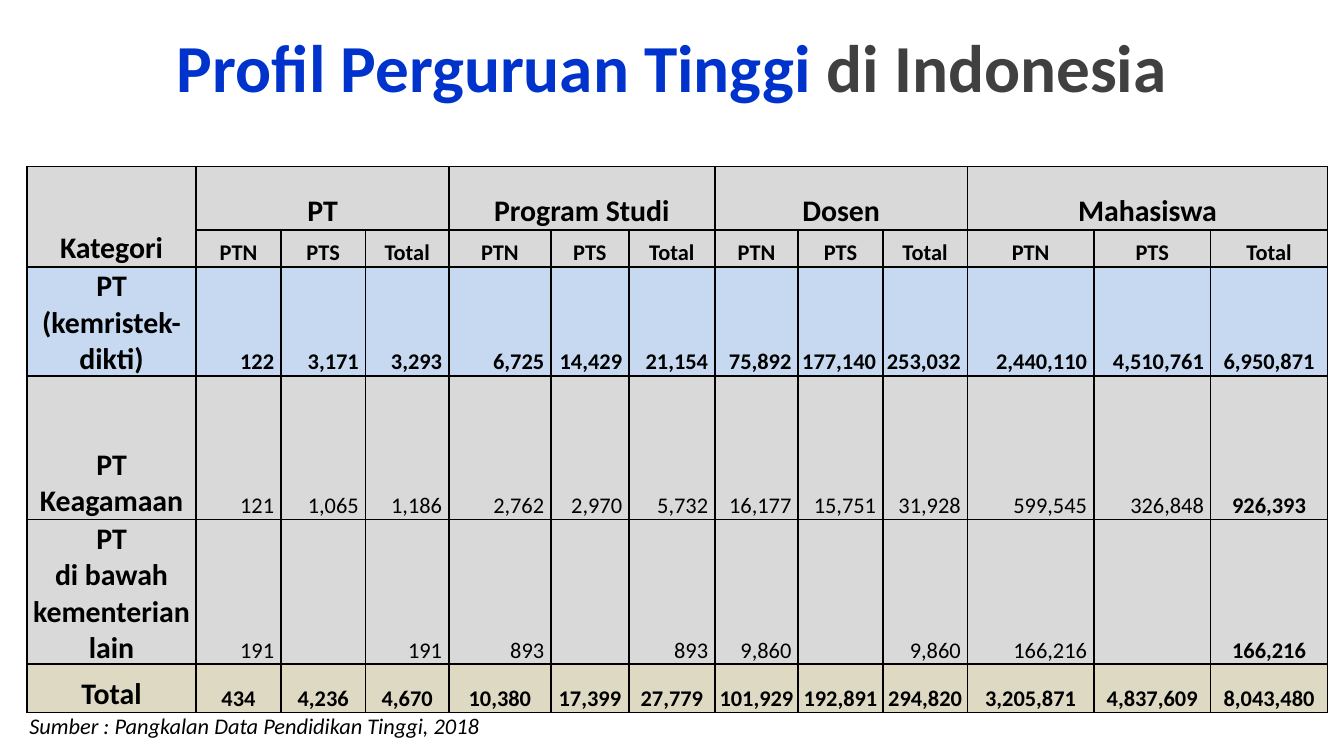
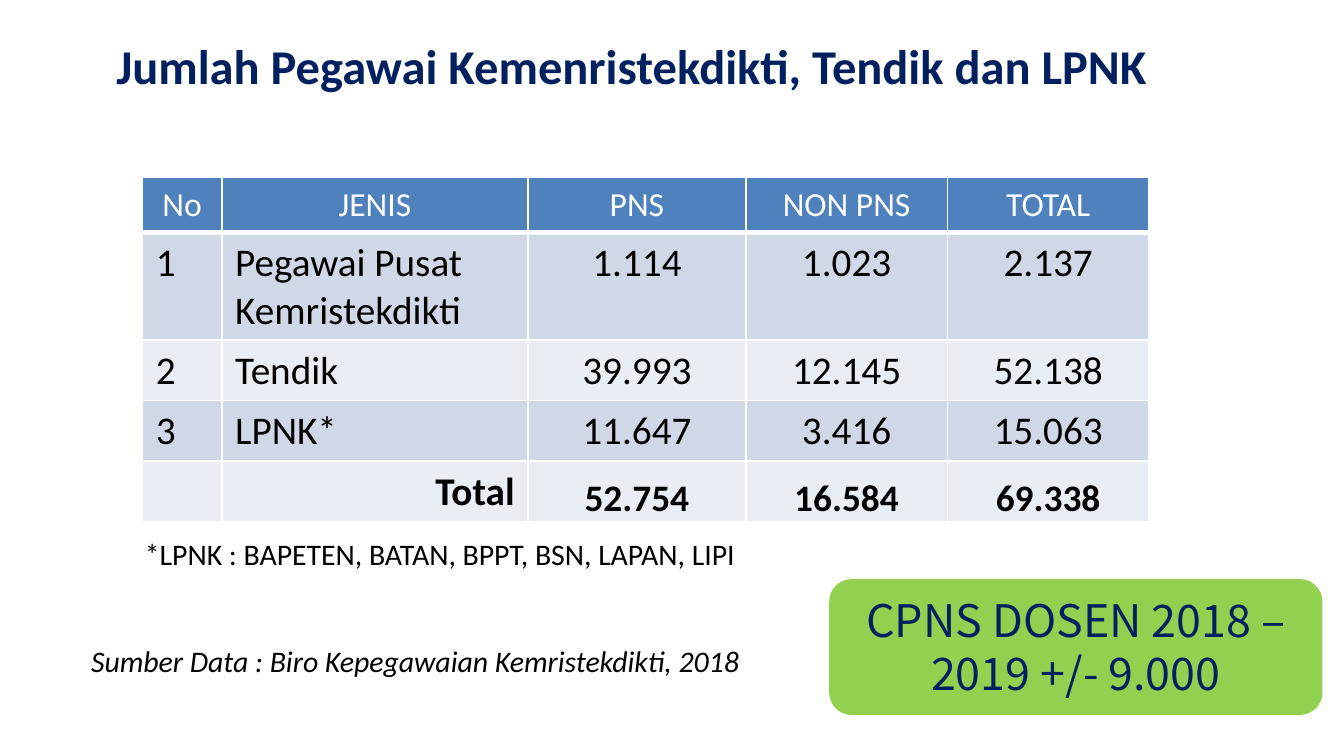
import lxml.etree
import pptx
import pptx.dml.color
import pptx.enum.shapes
import pptx.enum.text
import pptx.oxml.ns
import pptx.util

RGBColor = pptx.dml.color.RGBColor
ALIGN = pptx.enum.text.PP_ALIGN
ANCHOR = pptx.enum.text.MSO_ANCHOR
Inches = pptx.util.Inches

BLACK = RGBColor(0x00, 0x00, 0x00)
WHITE = RGBColor(0xFF, 0xFF, 0xFF)
BLUE = RGBColor(0x00, 0x33, 0xCC)
NAVY = RGBColor(0x00, 0x20, 0x60)
CHARCOAL = RGBColor(0x40, 0x40, 0x40)
GREY = RGBColor(0xD9, 0xD9, 0xD9)
LIGHT_BLUE = RGBColor(0xC6, 0xD9, 0xF1)
BEIGE = RGBColor(0xDD, 0xD9, 0xC3)
HEADER_BLUE = RGBColor(0x4F, 0x81, 0xBD)
BAND_DARK = RGBColor(0xD0, 0xD8, 0xE8)
BAND_LIGHT = RGBColor(0xE9, 0xED, 0xF4)
GREEN = RGBColor(0x92, 0xD0, 0x50)

BODY_FONT = "Calibri"
SLIDE_WIDTH, SLIDE_HEIGHT = Inches(10), Inches(5.625)
TITLE_HEIGHT = 17.25
TIGHT = {"margin_left": Inches(0.01), "margin_top": Inches(0.01),
         "margin_right": Inches(0.01), "margin_bottom": 0,
         "vertical_anchor": ANCHOR.BOTTOM}
NUMBER = {**TIGHT, "margin_right": Inches(0.05)}

# Profile table: one row per category, three figures per group
GROUPS = ["PT", "Program Studi", "Dosen", "Mahasiswa"]
KINDS = ["PTN", "PTS", "Total"]
PROFILE_COLUMNS = [12.6, 6.3, 6.3, 6.2, 7.6, 5.8, 6.4, 6.2, 6.3, 6.3, 9.4, 8.7, 8.7]
PROFILE_ROWS = [8.36, 4.27, 12.44, 19.02, 19.02, 6.4]
PROFILE = [
    ("PT\n(kemristek-\ndikti)", LIGHT_BLUE,
     ["122", "3,171", "3,293", "6,725", "14,429", "21,154",
      "75,892", "177,140", "253,032", "2,440,110", "4,510,761", "6,950,871"]),
    ("PT\nKeagamaan", GREY,
     ["121", "1,065", "1,186", "2,762", "2,970", "5,732",
      "16,177", "15,751", "31,928", "599,545", "326,848", "926,393"]),
    ("PT\ndi bawah\nkementerian lain", GREY,
     ["191", "", "191", "893", "", "893",
      "9,860", "", "9,860", "166,216", "", "166,216"]),
    ("Total", BEIGE,
     ["434", "4,236", "4,670", "10,380", "17,399", "27,779",
      "101,929", "192,891", "294,820", "3,205,871", "4,837,609", "8,043,480"]),
]

# Staff table
STAFF_COLUMNS = [5.9, 22.8, 16.2, 15, 15]
STAFF_ROW = 7.29
STAFF = [
    ["No", "JENIS", "PNS", "NON PNS", "TOTAL"],
    ["1", "Pegawai Pusat\nKemristekdikti", "1.114", "1.023", "2.137"],
    ["2", "Tendik", "39.993", "12.145", "52.138"],
    ["3", "LPNK*", "11.647", "3.416", "15.063"],
    ["", "Total", "52.754", "16.584", "69.338"],
]


def across(percent):
    return round(SLIDE_WIDTH * percent / 100)


def down(percent):
    return round(SLIDE_HEIGHT * percent / 100)


def place(left, top, width, height):
    """Turn percentages of the slide into lengths."""
    return across(left), down(top), across(width), down(height)


def apply(target, values):
    for name, value in values.items():
        setattr(target, name, value)


def style_font(font, size, color=BLACK, **values):
    apply(font, {"name": BODY_FONT, "size": pptx.util.Pt(size), "bold": False, **values})
    font.color.rgb = color


def write(frame, text, size, color=BLACK, align=ALIGN.LEFT, **values):
    """Write one paragraph for each line of text."""
    for index, line in enumerate(text.split("\n")):
        paragraph = frame.add_paragraph() if index else frame.paragraphs[0]
        paragraph.alignment = align
        style_font(paragraph.font, size, color, **values)
        if line:
            run = paragraph.add_run()
            run.text = line
            style_font(run.font, size, color, **values)


def add_text_box(slide, box, anchor=ANCHOR.TOP):
    frame = slide.shapes.add_textbox(*place(*box)).text_frame
    apply(frame, {"word_wrap": True, "vertical_anchor": anchor})
    return frame


def add_title(slide, width, size, parts):
    frame = add_text_box(slide, (0, 0, width, TITLE_HEIGHT), ANCHOR.MIDDLE)
    paragraph = frame.paragraphs[0]
    paragraph.alignment = ALIGN.CENTER
    for text, color in parts:
        run = paragraph.add_run()
        run.text = text
        style_font(run.font, size, color, bold=True)


def add_note(slide, box, text, size, italic=False):
    frame = add_text_box(slide, box)
    write(frame, text, size, italic=italic)
    frame.auto_size = pptx.enum.text.MSO_AUTO_SIZE.SHAPE_TO_FIT_TEXT


def add_callout(slide, box, text):
    shape = slide.shapes.add_shape(
        pptx.enum.shapes.MSO_SHAPE.ROUNDED_RECTANGLE, *place(*box))
    shape.shadow.inherit = False
    shape.fill.solid()
    shape.fill.fore_color.rgb = GREEN
    shape.line.fill.background()
    apply(shape.text_frame, {
        "word_wrap": True, "vertical_anchor": ANCHOR.TOP,
        "auto_size": pptx.enum.text.MSO_AUTO_SIZE.SHAPE_TO_FIT_TEXT})
    write(shape.text_frame, text, 24, NAVY, ALIGN.CENTER, name="Noto Sans CJK KR")


def add_table(slide, box, columns, rows):
    graphic = slide.shapes.add_table(len(rows), len(columns), *place(*box))
    table = graphic.table
    apply(table, {"first_row": False, "horz_banding": False})
    for column, width in zip(table.columns, columns):
        column.width = across(width)
    for row, height in zip(table.rows, rows):
        row.height = down(height)
    graphic.height = down(box[3])
    return table


def set_borders(cell, color, bottom=1):
    properties = cell._tc.get_or_add_tcPr()
    for side, width in (("L", 1), ("R", 1), ("T", 1), ("B", bottom)):
        line = lxml.etree.SubElement(properties, pptx.oxml.ns.qn("a:ln" + side),
                                     w=str(pptx.util.Pt(width)))
        fill = lxml.etree.SubElement(line, pptx.oxml.ns.qn("a:solidFill"))
        lxml.etree.SubElement(fill, pptx.oxml.ns.qn("a:srgbClr"), val=str(color))


def fill_cell(cell, fill, border, layout, text, size, bottom=1, **values):
    set_borders(cell, border, bottom)
    cell.fill.solid()
    cell.fill.fore_color.rgb = fill
    apply(cell, layout)
    write(cell.text_frame, text, size, **values)


def add_profile_table(slide):
    table = add_table(slide, (2, 22.04, 96.9, 71.64), PROFILE_COLUMNS, PROFILE_ROWS)
    heading = {"align": ALIGN.CENTER, "bold": True}

    # Two heading rows
    for column in range(len(PROFILE_COLUMNS)):
        group, kind = divmod(column - 1, len(KINDS))
        top = "Kategori" if column == 0 else GROUPS[group] if kind == 0 else ""
        below = KINDS[kind] if column else ""
        fill_cell(table.cell(0, column), GREY, BLACK, TIGHT, top, 16, **heading)
        fill_cell(table.cell(1, column), GREY, BLACK, TIGHT, below, 12, **heading)
    table.cell(0, 0).merge(table.cell(1, 0))
    for first in range(1, len(PROFILE_COLUMNS), len(KINDS)):
        table.cell(0, first).merge(table.cell(0, first + len(KINDS) - 1))

    # Category rows
    for row, (category, fill, figures) in enumerate(PROFILE, start=2):
        fill_cell(table.cell(row, 0), fill, BLACK, TIGHT, category, 16, **heading)
        for column, figure in enumerate(figures, start=1):
            last = column == len(figures)
            centred = last or category == "Total"
            fill_cell(table.cell(row, column), fill, BLACK,
                      TIGHT if centred else NUMBER, figure, 12,
                      align=ALIGN.CENTER if centred else ALIGN.RIGHT,
                      bold=last or fill != GREY)


def add_staff_table(slide):
    table = add_table(slide, (10.6, 23.47, 74.8, 45.51), STAFF_COLUMNS,
                      [STAFF_ROW] * len(STAFF))
    for row, texts in enumerate(STAFF):
        header, total = row == 0, row == len(STAFF) - 1
        fill = HEADER_BLUE if header else BAND_DARK if row % 2 else BAND_LIGHT
        for column, text in enumerate(texts):
            figure = column > 1
            align = ALIGN.CENTER if header or figure else ALIGN.RIGHT if total else ALIGN.LEFT
            size = 18 if header else 20 if total and figure else 21
            fill_cell(table.cell(row, column), fill, WHITE,
                      TIGHT if total and figure else {}, text, size,
                      bottom=3 if header else 1, color=WHITE if header else BLACK,
                      align=align, bold=total)


def build_profile_slide(slide):
    add_title(slide, 100, 36, [("Profil Perguruan Tinggi ", BLUE), ("di Indonesia", CHARCOAL)])
    add_profile_table(slide)
    add_note(slide, (1.2, 93.33, 58.3, 5.33),
             "Sumber : Pangkalan Data Pendidikan Tinggi, 2018", 12, italic=True)


def build_staff_slide(slide):
    add_title(slide, 94.1, 26, [("Jumlah Pegawai Kemenristekdikti, Tendik dan LPNK", NAVY)])
    add_staff_table(slide)
    add_note(slide, (5.8, 84.09, 51.8, 6.58),
             "Sumber Data : Biro Kepegawaian Kemristekdikti, 2018", 16, italic=True)
    add_note(slide, (9.8, 70.04, 75.6, 6.58),
             "*LPNK : BAPETEN, BATAN, BPPT, BSN, LAPAN, LIPI", 16)
    add_callout(slide, (61.7, 76.62, 36.7, 17.96), "CPNS DOSEN 2018 – 2019 +/- 9.000")


def main():
    presentation = pptx.Presentation()
    apply(presentation, {"slide_width": SLIDE_WIDTH, "slide_height": SLIDE_HEIGHT})
    blank = presentation.slide_layouts[6]
    for build in (build_profile_slide, build_staff_slide):
        build(presentation.slides.add_slide(blank))
    presentation.save("out.pptx")


if __name__ == "__main__":
    main()
